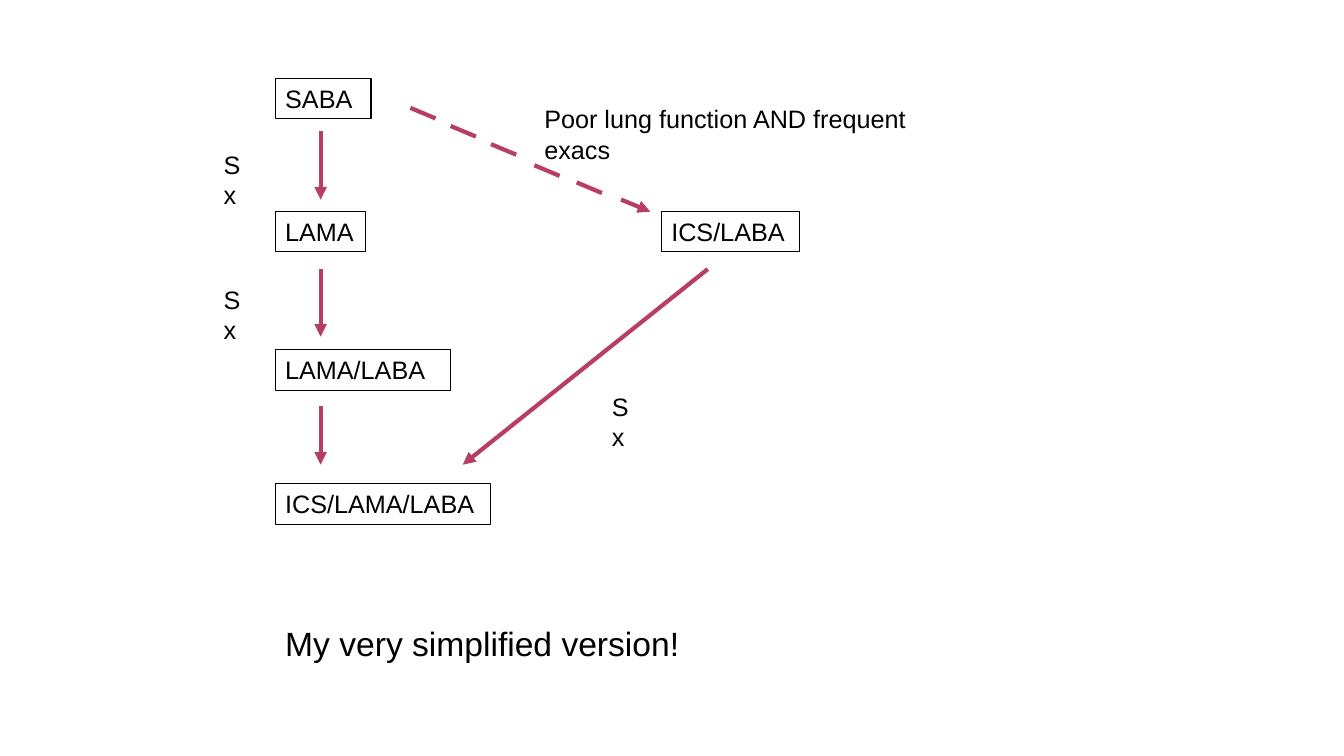
import pptx
import pptx.util
import pptx.dml.color
import pptx.enum.shapes
import pptx.enum.text
import pptx.oxml.ns
import lxml.etree

BLACK = pptx.dml.color.RGBColor(0x00, 0x00, 0x00)
WHITE = pptx.dml.color.RGBColor(0xFF, 0xFF, 0xFF)
ROSE = pptx.dml.color.RGBColor(0xB8, 0x3D, 0x68)
SLIDE_COLS, SLIDE_ROWS = 133.3, 75
CELL = pptx.util.Inches(0.1)
BOX_ROWS = 4


def cells(*lengths):
    return [round(n * CELL) for n in lengths]


def write(sp, text, size=18):
    tf = sp.text_frame
    frame_format = {
        "word_wrap": True,
        "auto_size": pptx.enum.text.MSO_AUTO_SIZE.NONE,
        "vertical_anchor": pptx.enum.text.MSO_ANCHOR.TOP,
    }
    for name, value in frame_format.items():
        setattr(tf, name, value)
    p = tf.paragraphs[0]
    p.alignment = pptx.enum.text.PP_ALIGN.LEFT
    r = p.add_run()
    r.text = text
    for name, value in {"name": "Arial", "size": pptx.util.Pt(size)}.items():
        setattr(r.font, name, value)
    r.font.color.rgb = BLACK


def add_label(s, text, left, top, width, height=BOX_ROWS, size=18):
    sp = s.shapes.add_textbox(*cells(left, top, width, height))
    write(sp, text, size)


def add_drug(s, text, left, top, width):
    sp = s.shapes.add_shape(
        pptx.enum.shapes.MSO_SHAPE.RECTANGLE, *cells(left, top, width, BOX_ROWS))
    sp.shadow.inherit = False
    sp.fill.background()
    sp.line.color.rgb = BLACK
    sp.line.width = pptx.util.Pt(0.75)
    write(sp, text)


def add_line(s, x1, y1, x2, y2, arrow=True):
    cx = s.shapes.add_connector(
        pptx.enum.shapes.MSO_CONNECTOR.STRAIGHT, *cells(x1, y1, x2, y2))
    cx.line.color.rgb = ROSE
    cx.line.width = pptx.util.Pt(3)
    qn = pptx.oxml.ns.qn
    if arrow:
        ln = cx.line._get_or_add_ln()
        lxml.etree.SubElement(ln, qn("a:tailEnd"), type="triangle")
    lxml.etree.SubElement(cx._element.spPr, qn("a:effectLst"))


def add_steps(s, left, top):
    steps = [
        ("SABA", 0, 9.5),
        ("LAMA", 13.2, 9),
        ("LAMA/LABA", 26.9, 17.4),
        ("ICS/LAMA/LABA", 40.2, 21.4),
    ]
    for text, row, width in steps:
        add_drug(s, text, left, top + row, width)
    for start, end in [(5.2, 12), (18.9, 25.6), (32.5, 38.3)]:
        add_line(s, left + 4.5, top + start, left + 4.5, top + end)
    for row in (6.5, 19.9):
        add_label(s, "Sx", left - 6.1, top + row, 4.3)


def add_branch(s, left, top):
    dashes = [(0, 0), (4, 1.8), (8, 3.6), (12.3, 5.7), (16.5, 7.4)]
    for col, row in dashes:
        x, y = left + col, top + row
        add_line(s, x, y, x + 2.5, y + 1.05, arrow=False)
    add_line(s, left + 20.9, top + 9.1, left + 23.8, top + 10.3)
    add_label(s, "Poor lung function AND frequent exacs",
              left + 12.3, top - 0.9, 41.9)
    add_drug(s, "ICS/LABA", left + 24.9, top + 10.3, 13.7)
    add_line(s, left + 29.5, top + 16, left + 5.2, top + 35.4)
    add_label(s, "Sx", left + 19, top + 27.6, 4.3)


def add_caption(s, left, top):
    add_label(s, "My very simplified version!", left, top, 41.5, 5, size=24)


def main():
    prs = pptx.Presentation()
    prs.slide_width, prs.slide_height = cells(SLIDE_COLS, SLIDE_ROWS)
    s = prs.slides.add_slide(prs.slide_layouts[6])
    s.background.fill.solid()
    s.background.fill.fore_color.rgb = WHITE
    add_steps(s, 27.3, 7.8)
    add_branch(s, 40.7, 10.7)
    add_caption(s, 27.3, 61.3)
    prs.save("out.pptx")


if __name__ == "__main__":
    main()
